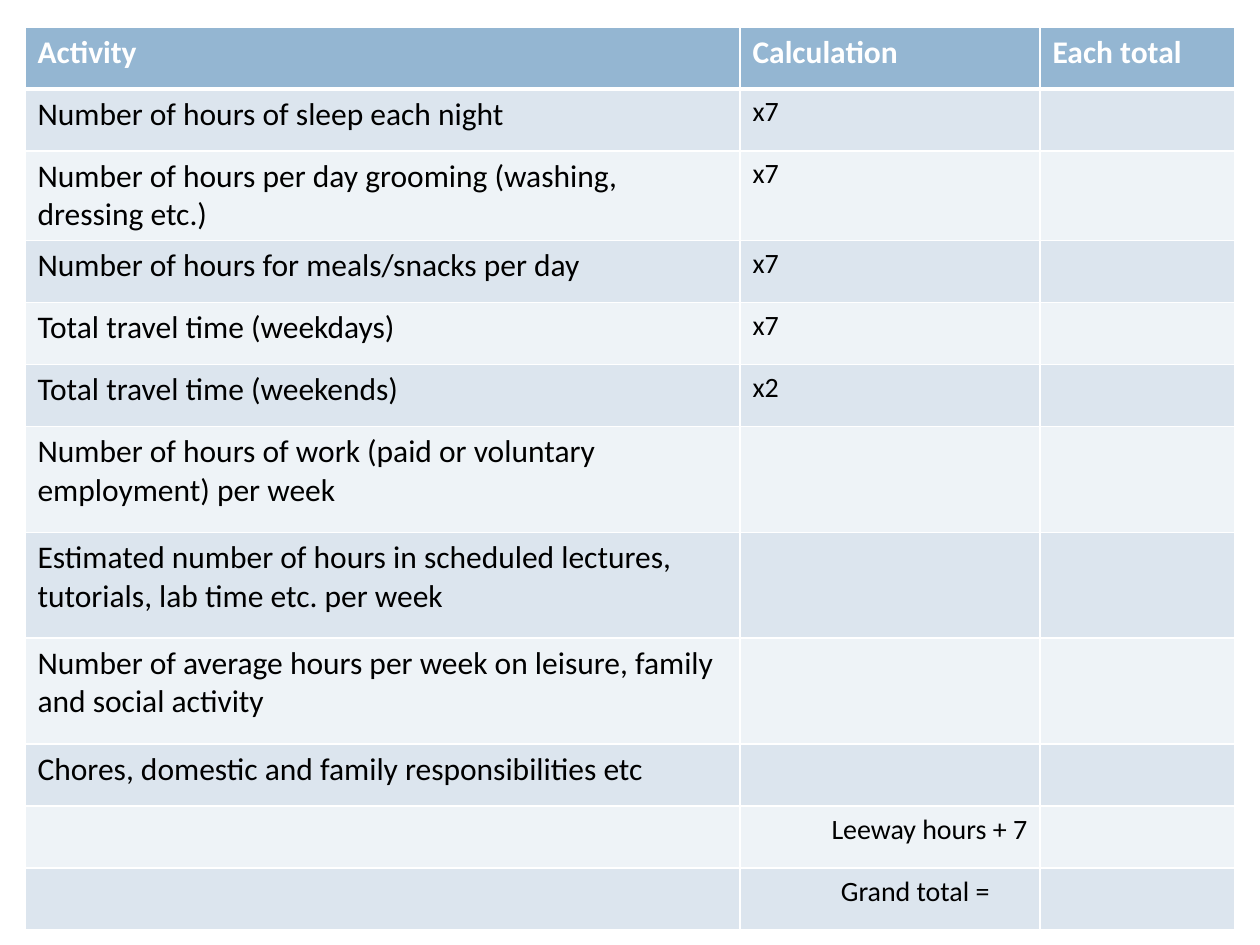
from lxml import etree
from pptx import Presentation
from pptx import util as u
from pptx.dml.color import RGBColor
from pptx.enum import text
from pptx.oxml.ns import qn

PX = u.Inches(1) / 126

WHITE = RGBColor(0xFF, 0xFF, 0xFF)
BLACK = RGBColor(0x00, 0x00, 0x00)
HEADER_BLUE = RGBColor(0x94, 0xB6, 0xD2)
BANDS = RGBColor(0xDC, 0xE5, 0xEE), RGBColor(0xEE, 0xF3, 0xF7)

LEFT, TOP = 25, 27
COLUMNS = [("Activity", 715), ("Calculation", 300), ("Each total", 195)]
SHORT, TALL = 62, 106
GRAND_TOTAL_INDENT = 101

# activity, calculation, row height, format of the calculation
ACTIVITIES = [
    ("Number of hours of sleep each night", "x7", SHORT, {}),
    ("Number of hours per day grooming (washing, dressing etc.)", "x7", SHORT, {}),
    ("Number of hours for meals/snacks per day", "x7", SHORT, {}),
    ("Total travel time (weekdays)", "x7", SHORT, {}),
    ("Total travel time (weekends)", "x2", SHORT, {}),
    ("Number of hours of work (paid or voluntary employment) per week", "", TALL, {}),
    ("Estimated number of hours in scheduled lectures, tutorials, lab time etc. per week",
     "", TALL, {}),
    ("Number of average hours per week on leisure, family and social activity", "", TALL, {}),
    ("Chores, domestic and family responsibilities etc", "", SHORT, {}),
    ("", "Leeway hours + 7", SHORT, {"align": text.PP_ALIGN.RIGHT}),
    ("", "Grand total =", SHORT, {"indent": GRAND_TOTAL_INDENT}),
]


def px(length):
    return u.Emu(round(length * PX))


def write(cell, words, size=18, color=BLACK, bold=False, align=None, indent=None):
    if not words:
        return
    paragraph = cell.text_frame.paragraphs[0]
    paragraph.alignment = align
    if indent:
        cell.margin_left = px(indent)
    run = paragraph.add_run()
    run.text = words
    run.font.name = "Calibri"
    run.font.size = u.Pt(size)
    run.font.bold = bold
    run.font.color.rgb = color


def paint(cell, fill, top=1, bottom=1):
    """Give the cell white borders, in points, and then its fill."""
    properties = cell._tc.get_or_add_tcPr()
    for side, width in (("L", 1), ("R", 1), ("T", top), ("B", bottom)):
        border = etree.SubElement(properties, qn(f"a:ln{side}"), w=str(u.Pt(width)))
        solid = etree.SubElement(border, qn("a:solidFill"))
        etree.SubElement(solid, qn("a:srgbClr"), val=str(WHITE))
    cell.fill.solid()
    cell.fill.fore_color.rgb = fill


def main():
    deck = Presentation()
    deck.slide_width, deck.slide_height = px(1260), px(945)
    slide = deck.slides.add_slide(deck.slide_layouts[6])

    heights = [SHORT] + [height for _, _, height, _ in ACTIVITIES]
    widths = [width for _, width in COLUMNS]
    table = slide.shapes.add_table(
        len(heights), len(widths), px(LEFT), px(TOP), px(sum(widths)), px(sum(heights))
    ).table
    for column, width in zip(table.columns, widths):
        column.width = px(width)
    for row, height in zip(table.rows, heights):
        row.height = px(height)

    for number, (heading, _) in enumerate(COLUMNS):
        cell = table.cell(0, number)
        paint(cell, HEADER_BLUE, bottom=3)
        write(cell, heading, color=WHITE, bold=True)

    for number, (activity, calculation, _, style) in enumerate(ACTIVITIES, start=1):
        for cell in table.rows[number].cells:
            paint(cell, BANDS[(number - 1) % 2], top=3 if number == 1 else 1)
        write(table.cell(number, 0), activity)
        write(table.cell(number, 1), calculation, size=16, **style)

    deck.save("out.pptx")


if __name__ == "__main__":
    main()
